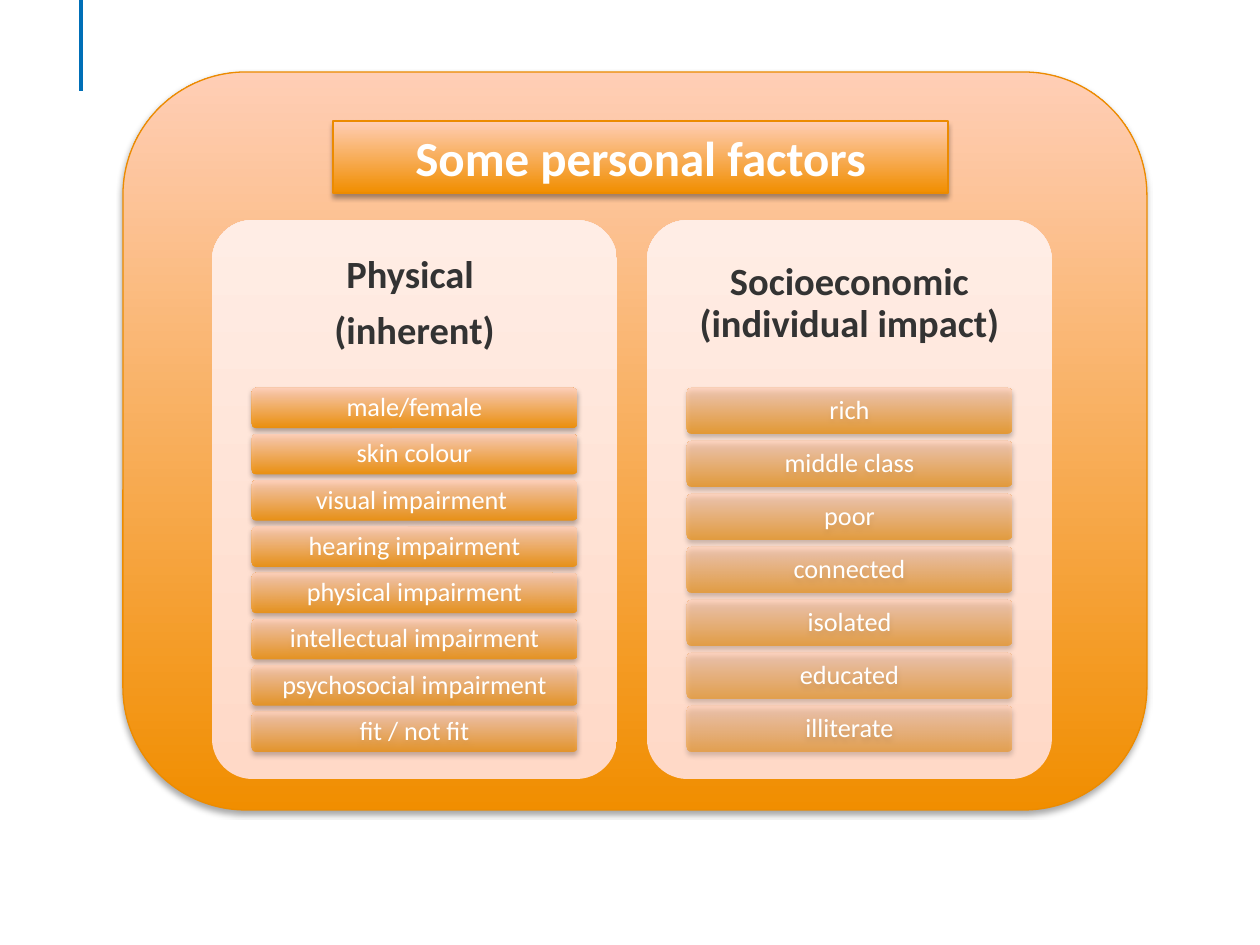
from dataclasses import dataclass

from lxml.etree import SubElement
from pptx import Presentation
from pptx.dml.color import RGBColor
from pptx.enum.shapes import MSO_CONNECTOR, MSO_SHAPE
from pptx.enum.text import MSO_ANCHOR, PP_ALIGN
from pptx.oxml.ns import qn
from pptx.util import Emu, Pt

TITLE = "Some personal factors"
COLUMNS = [
    (["Physical ", "(inherent)"],
     ["male/female", "skin colour", "visual impairment ", "hearing impairment",
      "physical impairment", "intellectual impairment",
      "psychosocial impairment", "fit / not fit"]),
    (["Socioeconomic (individual impact)"],
     ["rich", "middle class", "poor", "connected", "isolated", "educated",
      "illiterate"]),
]


@dataclass(frozen=True)
class Theme:
    font: str = "Calibri"
    orange: tuple = ("F18E00", "FFCEB6")  # bottom, top
    pale: tuple = ("FFD9C7", "FFEDE5")
    edge: str = "EC8B00"
    accent: str = "006FB7"
    shadow: str = "000000"
    dark: str = "333333"
    white: str = "FFFFFF"
    title_size: int = 28
    heading_size: int = 22
    item_size: int = 15


THEME = Theme()
PX = 914400 // 126

# Boxes are left, top, width, height in px
SLIDE = (1260, 945)
FRAME = (123, 72, 1024, 738)
BANNER = (333, 121, 615, 72)
COLUMN_LEFT, COLUMN_TOP, COLUMN_W, COLUMN_H = 212, 220, 405, 559
COLUMN_STEP = 435
HEADING_H = 168
BAR_INSET = 40
BARS_H = 364
GAP_RATIO = 0.154  # gap between bars as a share of bar height
OPACITY_START, OPACITY_END = 90, 50


def px(*lengths):
    return [Emu(round(length * PX)) for length in lengths]


def add_panel(slide, kind, box, gradient, radius=None, opacity=100, edge=False, shadow=True):
    """Add a shape whose gradient runs from bottom to top."""
    panel = slide.shapes.add_shape(kind, *px(*box))
    if radius is not None:
        panel.adjustments[0] = radius
    panel.fill.gradient()
    panel.fill.gradient_angle = 90
    for stop, position, colour in zip(panel.fill.gradient_stops, (0, 1), gradient):
        stop.position = position
        stop.color.rgb = RGBColor.from_string(colour)
    properties = panel._element.spPr
    if opacity < 100:
        for colour in properties.iter(qn("a:srgbClr")):
            SubElement(colour, qn("a:alpha"), val=str(round(opacity * 1000)))
    if edge:
        panel.line.color.rgb = RGBColor.from_string(THEME.edge)
        panel.line.width = Pt(0.75)
    else:
        panel.line.fill.background()
    panel.shadow.inherit = False
    if shadow:
        outer = SubElement(properties.find(qn("a:effectLst")), qn("a:outerShdw"),
                           blurRad=str(Pt(3.1)), dist=str(Pt(1.8)),
                           dir="5400000", rotWithShape="0")
        colour = SubElement(outer, qn("a:srgbClr"), val=THEME.shadow)
        SubElement(colour, qn("a:alpha"), val="35000")
    return panel


def write(shape, lines, size, colour, bold=False, margins=(12, 6), tight=True):
    """Fill a shape with centred text; tight text has 90% line spacing."""
    frame = shape.text_frame
    frame.word_wrap = True
    frame.vertical_anchor = MSO_ANCHOR.MIDDLE
    frame.margin_left = frame.margin_right = px(margins[0])[0]
    frame.margin_top = frame.margin_bottom = px(margins[1])[0]
    for index, line in enumerate(lines):
        paragraph = frame.add_paragraph() if index else frame.paragraphs[0]
        paragraph.alignment = PP_ALIGN.CENTER
        if tight:
            paragraph.line_spacing = 0.9
            after = SubElement(paragraph._p.get_or_add_pPr(), qn("a:spcAft"))
            SubElement(after, qn("a:spcPct"), val="35000")
        run = paragraph.add_run()
        run.text = line
        run.font.name = THEME.font
        run.font.size = Pt(size)
        run.font.bold = bold
        run.font.color.rgb = RGBColor.from_string(colour)


def add_accent_line(slide):
    accent = slide.shapes.add_connector(MSO_CONNECTOR.STRAIGHT, *px(81, 0, 81, 91))
    accent.line.color.rgb = RGBColor.from_string(THEME.accent)
    accent.line.width = Pt(2)
    SubElement(accent._element.spPr, qn("a:effectLst"))


def add_columns(slide):
    last_item = sum(len(items) for _, items in COLUMNS) - 1
    fade = (OPACITY_START - OPACITY_END) / last_item
    opacity = OPACITY_START
    for number, (heading, items) in enumerate(COLUMNS):
        left = COLUMN_LEFT + number * COLUMN_STEP
        add_panel(slide, MSO_SHAPE.ROUNDED_RECTANGLE,
                  (left, COLUMN_TOP, COLUMN_W, COLUMN_H), THEME.pale,
                  radius=0.1, shadow=False)
        heading_box = slide.shapes.add_textbox(*px(left, COLUMN_TOP, COLUMN_W, HEADING_H))
        write(heading_box, heading, THEME.heading_size, THEME.dark, bold=True, margins=(12, 12))

        bar_h = BARS_H / (len(items) + (len(items) - 1) * GAP_RATIO)
        for row, item in enumerate(items):
            top = COLUMN_TOP + HEADING_H + row * bar_h * (1 + GAP_RATIO)
            bar = add_panel(slide, MSO_SHAPE.ROUNDED_RECTANGLE,
                            (left + BAR_INSET, top, COLUMN_W - 2 * BAR_INSET, bar_h),
                            THEME.orange, radius=0.1, opacity=opacity)
            write(bar, [item], THEME.item_size, THEME.white, margins=(6, 5))
            opacity -= fade


def main():
    deck = Presentation()
    deck.slide_width, deck.slide_height = px(*SLIDE)
    slide = deck.slides.add_slide(deck.slide_layouts[6])
    add_accent_line(slide)
    add_panel(slide, MSO_SHAPE.ROUNDED_RECTANGLE, FRAME, THEME.orange, edge=True)
    add_columns(slide)
    banner = add_panel(slide, MSO_SHAPE.RECTANGLE, BANNER, THEME.orange, edge=True)
    write(banner, [TITLE], THEME.title_size, THEME.white, bold=True, tight=False)
    deck.save("out.pptx")


if __name__ == "__main__":
    main()
